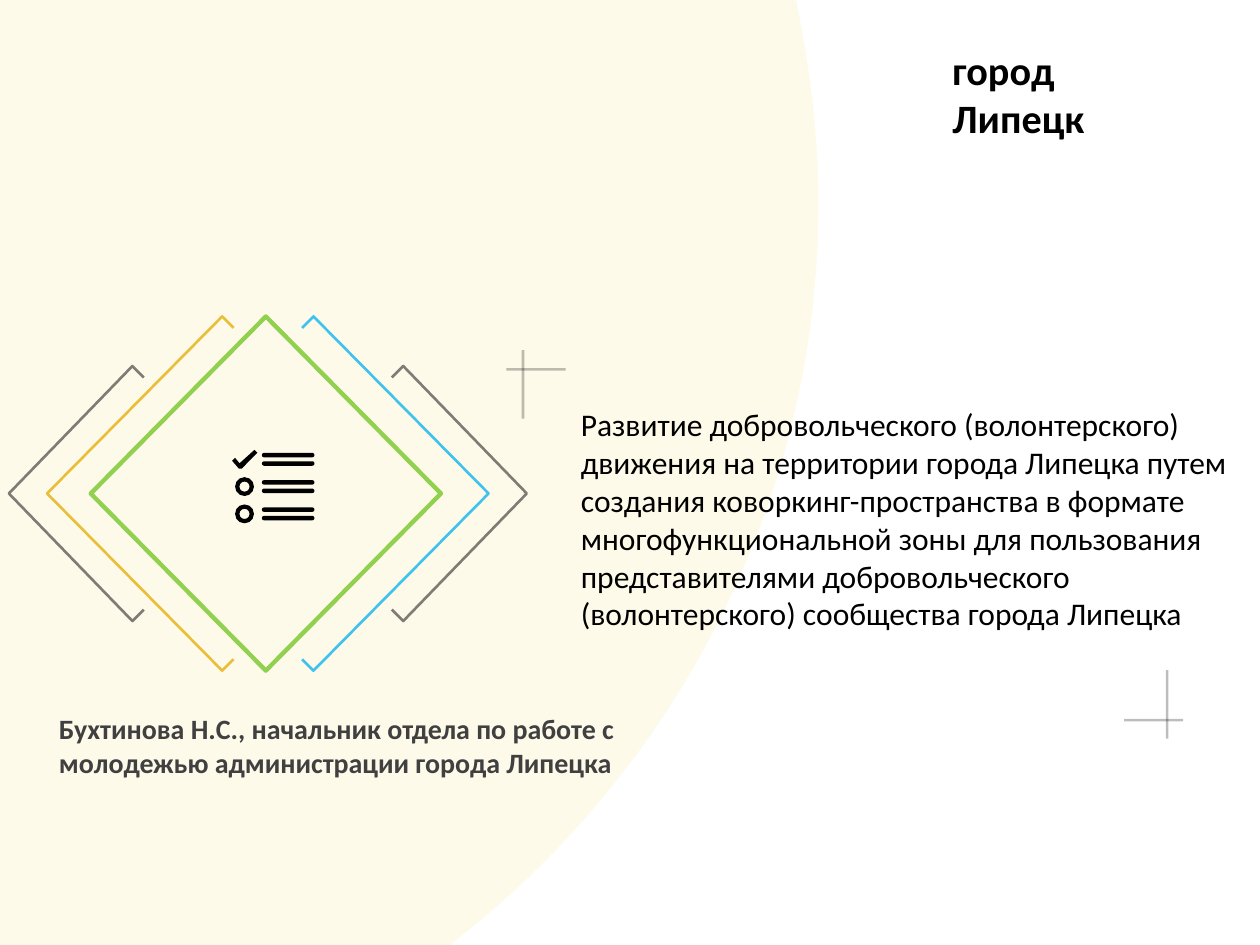
from pptx import Presentation
from pptx.dml.color import RGBColor
from pptx.enum.shapes import MSO_CONNECTOR as Connector, MSO_SHAPE as Shape
from pptx.oxml.ns import qn
from pptx.oxml.xmlchemy import OxmlElement
from pptx.util import Cm, Pt

BLACK, DARK, GREEN = "000000", "404040", "92D050"
YELLOW, BLUE, CREAM = "E2AC00", "00B0F0", "FCE06E"


def rgb(value):
    return RGBColor.from_string(value)


def fade(shape, percent):
    """Make the colour of a shape partly transparent."""
    for color in shape._element.iter(qn("a:srgbClr")):
        alpha = OxmlElement("a:alpha")
        alpha.set("val", str(percent * 1000))
        color.append(alpha)


def outline(shape, color, width):
    shape.line.color.rgb = rgb(color)
    shape.line.width = Pt(width)


def fill_solid(shape, color):
    shape.shadow.inherit = False
    shape.fill.solid()
    shape.fill.fore_color.rgb = rgb(color)
    shape.line.fill.background()


def add_path(shapes, points, close=False):
    """Draw a freeform through points given in centimetres."""
    start, *rest = [(Cm(x), Cm(y)) for x, y in points]
    builder = shapes.build_freeform(*start, scale=1.0)
    builder.add_line_segments(rest, close=close)
    path = builder.convert_to_shape()
    path.shadow.inherit = False
    return path


def bezier(points, steps=40):
    """Points along a cubic curve, without its first point."""
    for step in range(1, steps + 1):
        t = step / steps
        weights = ((1 - t) ** 3, 3 * t * (1 - t) ** 2, 3 * t * t * (1 - t), t ** 3)
        yield tuple(sum(w * p[axis] for w, p in zip(weights, points)) for axis in (0, 1))


def add_backdrop(page, left, top, width, height):
    """Pale area with a curved right edge."""
    right, turn = left + width, top + 4.11
    foot, head = (left + 9.07, top + height), (right - 0.45, top)
    lower = [foot, (left + 13.59, top + 15.57), (right, top + 10.16), (right, turn)]
    upper = [(right, turn), (right, top + 2.69), (right - 0.18, top + 1.32), head]
    points = [(left, top + height), foot, *bezier(lower), *bezier(upper), (left, top)]
    backdrop = add_path(page.shapes, points, close=True)
    fill_solid(backdrop, CREAM)
    fade(backdrop, 14)


def add_text(page, left, top, width, height, lines, size, color=BLACK, bold=False):
    box = page.shapes.add_textbox(Cm(left), Cm(top), Cm(width), Cm(height))
    frame = box.text_frame
    frame.word_wrap = True
    for number, line in enumerate(lines):
        para = frame.add_paragraph() if number else frame.paragraphs[0]
        para.text = line
        para.font.name = "Calibri"
        para.font.size = Pt(size)
        para.font.bold = bold
        para.font.color.rgb = rgb(color)


def add_bracket(page, left, top, width, height, color, opacity, points_left):
    """Angle bracket with short hooks at both ends."""
    hook = 0.23
    tip, corner, end = 0, width - hook, width
    if not points_left:
        tip, corner, end = width, hook, 0
    steps = [(end, hook), (corner, 0), (tip, height / 2),
             (corner, height), (end, height - hook)]
    bracket = add_path(page.shapes, [(left + x, top + y) for x, y in steps])
    bracket.fill.background()
    outline(bracket, color, 1.5)
    fade(bracket, opacity)


def add_checklist(page, left, top):
    """Checklist icon: a tick, two rings and three pairs of bars."""
    shapes = page.shapes.add_group_shape().shapes
    tick = [(0, 0.22), (0.06, 0.16), (0.15, 0.27), (0.45, 0),
            (0.51, 0.06), (0.19, 0.38), (0.14, 0.38)]
    fill_solid(add_path(shapes, [(left + x, top + y) for x, y in tick], close=True), BLACK)
    row_step, bar_step, ring_size = 0.55, 0.17, 0.38
    for row in range(3):
        row_top = top + row * row_step
        if row:
            ring = shapes.add_shape(Shape.DONUT, Cm(left + 0.06), Cm(row_top),
                                    Cm(ring_size), Cm(ring_size))
            ring.adjustments[0] = 0.23
            fill_solid(ring, BLACK)
        for bar_number in range(2):
            bar = shapes.add_shape(Shape.ROUNDED_RECTANGLE, Cm(left + 0.6),
                                   Cm(row_top + 0.06 + bar_number * bar_step),
                                   Cm(1.06), Cm(0.09))
            bar.adjustments[0] = 0.5
            fill_solid(bar, BLACK)


def add_emblem(page, left, top, width, height):
    """Diamond with an icon between two nested pairs of brackets."""
    diamond_width = 7.06
    diamond = page.shapes.add_shape(
        Shape.DIAMOND, Cm(left + 1.65), Cm(top), Cm(diamond_width), Cm(height))
    diamond.shadow.inherit = False
    diamond.fill.background()
    outline(diamond, GREEN, 2.5)
    # inset from the side, inset from the top, width, left and right colour, opacity
    pairs = [(0, 1, 2.72, BLACK, BLACK, 50), (0.77, 0, 3.76, YELLOW, BLUE, 75)]
    for side, inset, wide, left_color, right_color, opacity in pairs:
        tall = height - 2 * inset
        add_bracket(page, left + side, top + inset, wide, tall, left_color, opacity, True)
        add_bracket(page, left + width - side - wide, top + inset, wide, tall,
                    right_color, opacity, False)
    add_checklist(page, left + 4.5, top + 2.69)


def add_cross(page, left, top, width, height, position):
    """Thin cross whose arms meet at a fraction of the box."""
    x, y = left + width * position, top + height * position
    shapes = page.shapes.add_group_shape().shapes
    for ends in ((left, y, left + width, y), (x, top, x, top + height)):
        arm = shapes.add_connector(Connector.STRAIGHT, *map(Cm, ends))
        outline(arm, BLACK, 1.5)
        fade(arm, 25)
        arm._element.spPr.append(OxmlElement("a:effectLst"))


def main():
    deck = Presentation()
    deck.slide_width, deck.slide_height = Cm(25.4), Cm(19.05)
    page = deck.slides.add_slide(deck.slide_layouts[6])

    add_backdrop(page, 0, 0, 16.5, 19.05)
    # Project title
    add_text(page, 11.46, 8.05, 13.61, 4.88, [
        "Развитие добровольческого (волонтерского) движения на территории города "
        "Липецка путем создания коворкинг-пространства в формате многофункциональной "
        "зоны для пользования представителями добровольческого (волонтерского) "
        "сообщества города Липецка"], 18)
    add_emblem(page, 0.18, 6.38, 10.44, 7.14)
    add_cross(page, 10.21, 7.06, 1.19, 1.38, 0.28)
    # City
    add_text(page, 18.95, 0.79, 8.61, 2.24, ["город", "Липецк"], 23, bold=True)
    add_cross(page, 22.66, 13.51, 1.19, 1.38, 0.73)
    # Author
    add_text(page, 0.94, 14.22, 13.61, 2.31, [
        "Бухтинова Н.С., начальник отдела по работе с молодежью администрации "
        "города Липецка"], 16, DARK, bold=True)
    deck.save("out.pptx")


if __name__ == "__main__":
    main()
